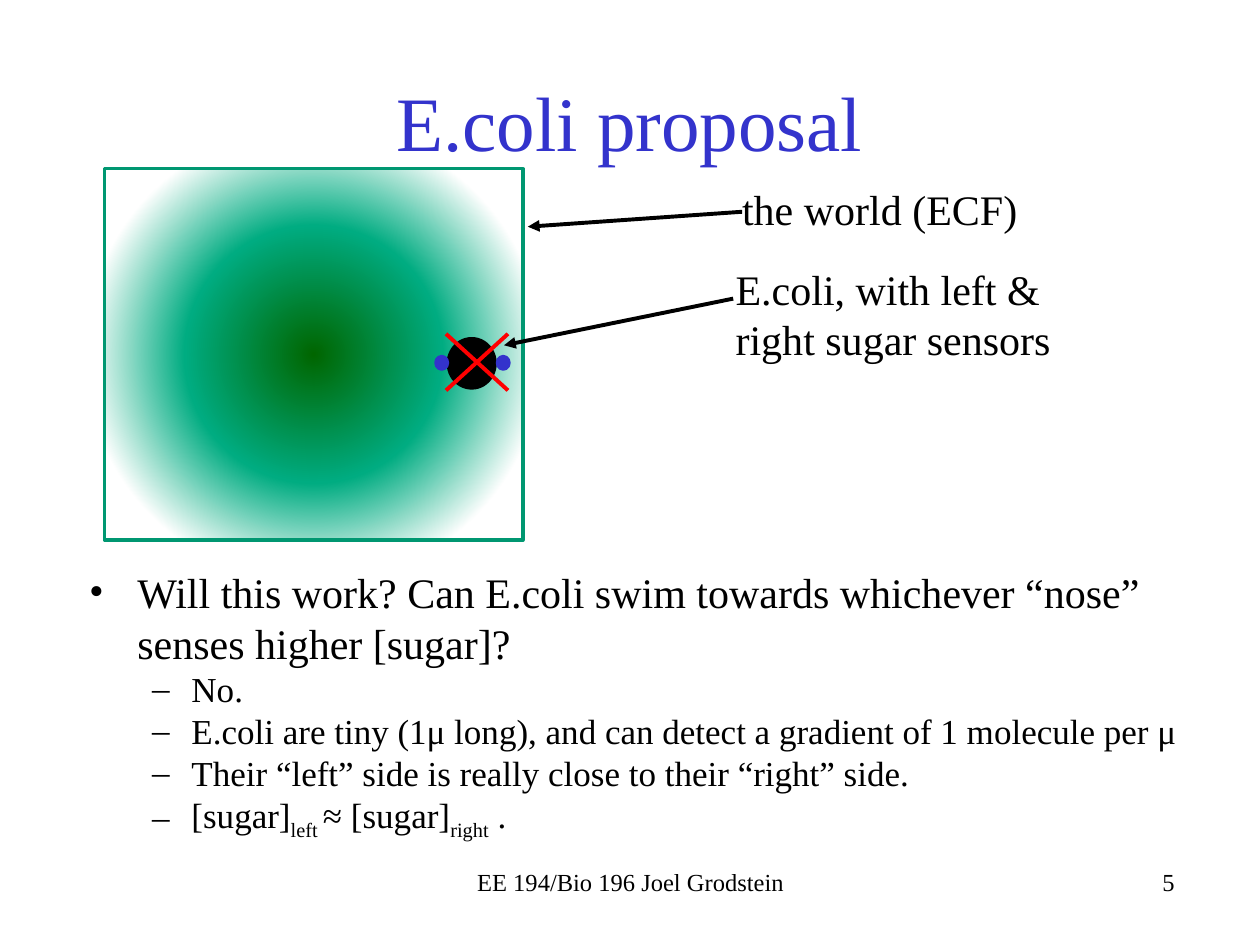
from dataclasses import dataclass

from lxml import etree
from pptx import Presentation
from pptx.dml.color import RGBColor
from pptx.enum.shapes import MSO_CONNECTOR, MSO_SHAPE
from pptx.enum.text import MSO_ANCHOR, PP_ALIGN
from pptx.oxml.ns import qn
from pptx.util import Cm, Pt

STRAIGHT = MSO_CONNECTOR.STRAIGHT
RECTANGLE, OVAL = MSO_SHAPE.RECTANGLE, MSO_SHAPE.OVAL
LEFT, CENTER, RIGHT = PP_ALIGN.LEFT, PP_ALIGN.CENTER, PP_ALIGN.RIGHT
TOP, MIDDLE = MSO_ANCHOR.TOP, MSO_ANCHOR.MIDDLE


@dataclass(frozen=True)
class Theme:
    font: str = "Times New Roman"
    black: str = "000000"
    blue: str = "3333CC"
    red: str = "FF0000"
    world_edge: str = "009771"
    sugar: tuple = ((0, "006600"), (46, "00AC81"), (82, "FFFFFF"))
    title_size: float = 44
    text_size: float = 24
    detail_size: float = 20
    footer_size: float = 14
    outline: float = 2
    stroke: float = 2.25


THEME = Theme()


@dataclass(frozen=True)
class Frame:
    left: float
    top: float
    width: float
    height: float

    def lengths(self) -> tuple:
        return Cm(self.left), Cm(self.top), Cm(self.width), Cm(self.height)


@dataclass(frozen=True)
class Label:
    frame: Frame
    text: str
    size: float
    color: str = THEME.black
    align: PP_ALIGN = LEFT
    anchor: MSO_ANCHOR = TOP


@dataclass(frozen=True)
class Stroke:
    start: tuple
    end: tuple
    color: str = THEME.black
    arrow: bool = False


@dataclass(frozen=True)
class Bullet:
    phrases: tuple
    size: float = THEME.detail_size
    mark: str = "–"
    margin: float = 2.06
    hang: float = 0.79
    level: int = 1
    before: float = 0


LABELS = (
    Label(Frame(1.9, 0.84, 21.59, 3.18), "E.coli proposal", THEME.title_size,
          THEME.blue, CENTER, MIDDLE),
    Label(Frame(14.71, 3.58, 6.81, 1.27), "the world (ECF)", THEME.text_size),
    Label(Frame(14.58, 5.18, 8.13, 2.31), "E.coli, with left & right sugar sensors",
          THEME.text_size),
    Label(Frame(8.69, 17.35, 8.05, 1.27), "EE 194/Bio 196 Joel Grodstein",
          THEME.footer_size, align=CENTER),
    Label(Frame(15.88, 17.35, 8.05, 1.27), "5", THEME.footer_size, align=RIGHT),
)

BULLETS = (
    Bullet(("Will this work? Can E.coli swim towards whichever “nose” "
            "senses higher [sugar]?",),
           THEME.text_size, "•", 0.97, 0.97, 0, 4.8),
    Bullet(("No.",)),
    Bullet(("E.coli are tiny (1μ long), and can detect a gradient of 1 molecule per μ",)),
    Bullet(("Their “left” side is really close to their “right” side.",)),
    Bullet(("[sugar]", "left ", "≈ [sugar]", "right", " .")),
)

WORLD = Frame(2.11, 3.4, 8.43, 7.49)
CELL = Frame(9.04, 6.83, 0.94, 0.99)
SENSORS = tuple(Frame(left, 7.19, 0.23, 0.25) for left in (8.79, 10.03))
STROKES = (
    Stroke((14.96, 4.27), (10.64, 4.57), arrow=True),
    Stroke((14.78, 6.02), (10.16, 6.96), arrow=True),
    Stroke((8.99, 6.73), (10.24, 7.87), THEME.red),
    Stroke((8.99, 7.87), (10.24, 6.73), THEME.red),
)


def style_span(span, size: float, color: str = THEME.black) -> None:
    span.font.name = THEME.font
    span.font.size = Pt(size)
    span.font.color.rgb = RGBColor.from_string(color)


def add_box(page, frame: Frame, anchor: MSO_ANCHOR = TOP):
    text_frame = page.shapes.add_textbox(*frame.lengths()).text_frame
    text_frame.word_wrap = True
    text_frame.vertical_anchor = anchor
    return text_frame


def add_label(page, label: Label) -> None:
    text_frame = add_box(page, label.frame, label.anchor)
    text_frame.text = label.text
    para = text_frame.paragraphs[0]
    para.alignment = label.align
    style_span(para.runs[0], label.size, label.color)


def add_bullets(page, frame: Frame, bullets: tuple) -> None:
    text_frame = add_box(page, frame)
    for index, bullet in enumerate(bullets):
        para = text_frame.add_paragraph() if index else text_frame.paragraphs[0]
        para.level = bullet.level
        para.space_before = Pt(bullet.before)
        properties = para._p.get_or_add_pPr()
        properties.set("marL", str(Cm(bullet.margin)))
        properties.set("indent", str(-Cm(bullet.hang)))
        etree.SubElement(properties, qn("a:buFont"), typeface=THEME.font)
        etree.SubElement(properties, qn("a:buChar"), char=bullet.mark)
        for position, phrase in enumerate(bullet.phrases):
            span = para.add_run()
            span.text = phrase
            style_span(span, bullet.size)
            if position % 2:
                span.font._element.set("baseline", "-25000")


def add_solid(page, kind: MSO_SHAPE, frame: Frame, fill: str, edge: str):
    shape = page.shapes.add_shape(kind, *frame.lengths())
    shape.shadow.inherit = False
    shape.fill.solid()
    shape.fill.fore_color.rgb = RGBColor.from_string(fill)
    shape.line.color.rgb = RGBColor.from_string(edge)
    shape.line.width = Pt(THEME.outline)
    return shape


def add_radial_fill(shape, stops: tuple) -> None:
    properties = shape._element.spPr
    gradient = etree.Element(qn("a:gradFill"), rotWithShape="1")
    stop_list = etree.SubElement(gradient, qn("a:gsLst"))
    for percent, color in stops:
        stop = etree.SubElement(stop_list, qn("a:gs"), pos=str(percent * 1000))
        etree.SubElement(stop, qn("a:srgbClr"), val=color)
    circle = etree.SubElement(gradient, qn("a:path"), {"path": "circle"})
    etree.SubElement(circle, qn("a:fillToRect"),
                     {side: "50000" for side in ("l", "t", "r", "b")})
    properties.replace(properties.find(qn("a:solidFill")), gradient)


def add_stroke(page, stroke: Stroke) -> None:
    ends = (Cm(value) for value in stroke.start + stroke.end)
    connector = page.shapes.add_connector(STRAIGHT, *ends)
    connector.line.color.rgb = RGBColor.from_string(stroke.color)
    connector.line.width = Pt(THEME.stroke)
    if stroke.arrow:
        etree.SubElement(connector.line._get_or_add_ln(), qn("a:tailEnd"), type="triangle")
    etree.SubElement(connector._element.spPr, qn("a:effectLst"))


def main() -> None:
    deck = Presentation()
    deck.slide_width, deck.slide_height = Cm(25.4), Cm(19.05)
    page = deck.slides.add_slide(deck.slide_layouts[6])
    world = add_solid(page, RECTANGLE, WORLD, THEME.sugar[0][1], THEME.world_edge)
    add_radial_fill(world, THEME.sugar)
    add_solid(page, OVAL, CELL, THEME.black, THEME.black)
    for sensor in SENSORS:
        add_solid(page, OVAL, sensor, THEME.blue, THEME.blue)
    for label in LABELS:
        add_label(page, label)
    add_bullets(page, Frame(1.55, 11.3, 22.81, 5.89), BULLETS)
    for stroke in STROKES:
        add_stroke(page, stroke)
    deck.save("out.pptx")


if __name__ == "__main__":
    main()
